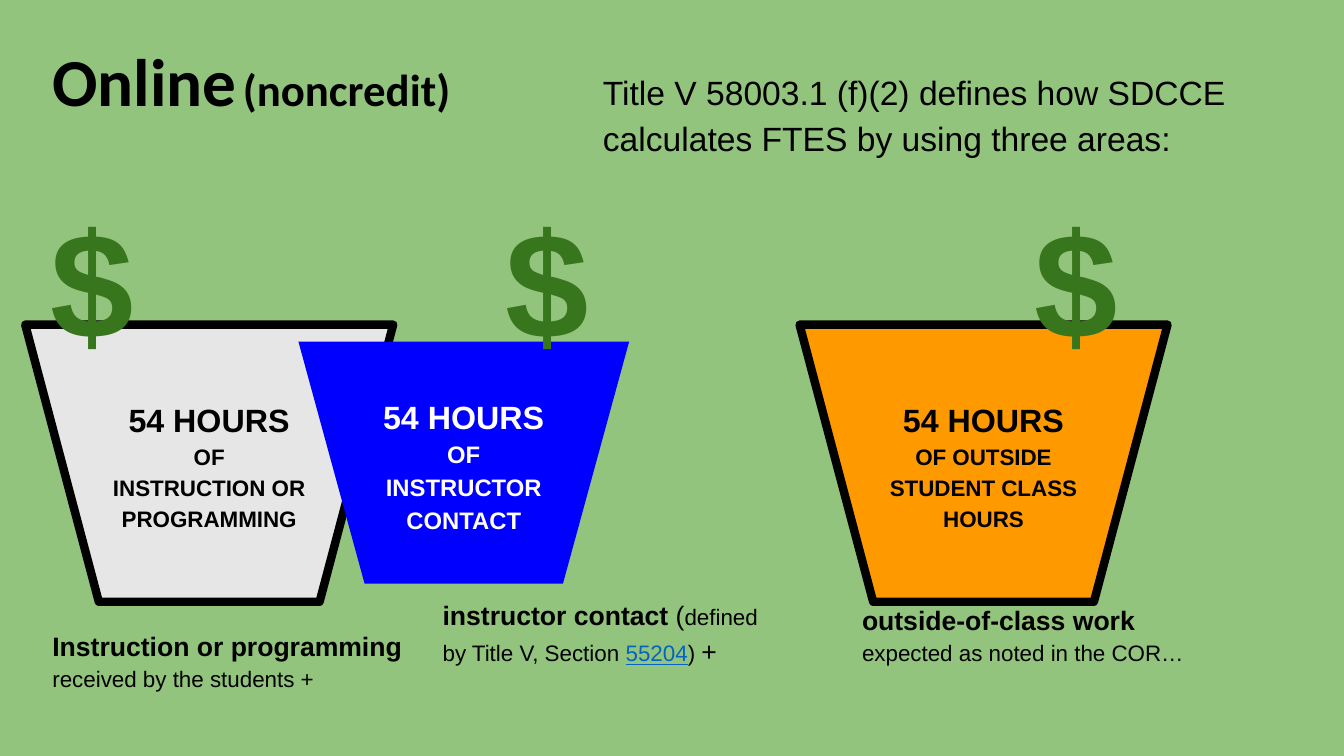
from lxml import etree
from pptx import Presentation
from pptx.dml.color import RGBColor
from pptx.enum.shapes import MSO_SHAPE as Shape
from pptx.enum.text import MSO_ANCHOR as Anchor, PP_ALIGN as Align
from pptx.oxml.ns import qn
from pptx.util import Inches, Pt

BLACK = RGBColor(0x00, 0x00, 0x00)
WHITE = RGBColor(0xFF, 0xFF, 0xFF)
SAGE = RGBColor(0x93, 0xC4, 0x7D)
GRAY = RGBColor(0xE7, 0xE6, 0xE6)
BLUE = RGBColor(0x00, 0x00, 0xFF)
ORANGE = RGBColor(0xFF, 0x99, 0x00)
GREEN = RGBColor(0x38, 0x76, 0x1D)
LINK_BLUE = RGBColor(0x05, 0x63, 0xC1)

# A span is (text, size, bold, colour); a paragraph is a list of spans.
TITLE = [[("Online", 48, True, BLACK), (" ", 19, True, BLACK),
          ("(noncredit)", 32, True, BLACK)]]
INTRO = [[("Title V 58003.1 (f)(2) defines how SDCCE calculates FTES "
           "by using three areas:", 24, False, BLACK)]]
DOLLAR = [[("$", 107, True, GREEN)]]

# (left, top, width, height), fill, outlined, paragraphs
BUCKETS = [
    ((0.25, 3.22, 3.65, 2.75), GRAY, True,
     [[("54 HOURS", 23, True, BLACK)],
      [("OF", 16, True, BLACK)],
      [("INSTRUCTION OR PROGRAMMING", 16, True, BLACK)]]),
    ((2.96, 3.39, 3.28, 2.4), BLUE, False,
     [[("54 HOURS", 23, True, WHITE),
       (" OF INSTRUCTOR CONTACT", 17, True, WHITE)]]),
    ((7.93, 3.22, 3.65, 2.75), ORANGE, True,
     [[("54 HOURS", 23, True, BLACK),
       (" OF OUTSIDE STUDENT CLASS HOURS", 16, True, BLACK)]]),
]
DOLLAR_LEFTS = [0, 4.51, 9.76]
CAPTIONS = [
    ((0.39, 6.07, 4.37, 1.37),
     [[("Instruction or programming ", 19, True, BLACK),
       ("received by the students +", 16, False, BLACK)]]),
    ((4.26, 5.76, 3.65, 1.51),
     [[("instructor contact", 19, True, BLACK), (" (", 19, False, BLACK),
       ("defined by Title V, Section ", 16, False, BLACK),
       ("55204", 16, False, LINK_BLUE),
       (") ", 16, False, BLACK), ("+", 19, False, BLACK)]]),
    ((8.42, 5.81, 3.77, 1.9),
     [[("outside-of-class work ", 19, True, BLACK),
       ("expected as noted in the COR…", 16, False, BLACK)]]),
]


def write(shape, paragraphs, align=Align.LEFT, anchor=Anchor.TOP,
          spacing=1.15, font="Arial"):
    frame = shape.text_frame
    frame.word_wrap = True
    frame.vertical_anchor = anchor
    frame.margin_left = frame.margin_right = Inches(0.13)
    frame.margin_top = frame.margin_bottom = Inches(0.13)
    for index, spans in enumerate(paragraphs):
        para = frame.add_paragraph() if index else frame.paragraphs[0]
        para.alignment = align
        para.line_spacing = spacing
        for text, size, bold, color in spans:
            span = para.add_run()
            span.text = text
            span.font.name = font
            span.font.size = Pt(size)
            span.font.bold = bold
            span.font.color.rgb = color
            span.font.underline = color == LINK_BLUE


def add_text(page, place, paragraphs, **style):
    write(page.shapes.add_textbox(*map(Inches, place)), paragraphs, **style)


def add_bucket(page, place, fill, outlined, paragraphs):
    bucket = page.shapes.add_shape(Shape.FLOWCHART_MANUAL_OPERATION,
                                   *map(Inches, place))
    bucket.shadow.inherit = False
    bucket.fill.solid()
    bucket.fill.fore_color.rgb = fill
    if outlined:
        bucket.line.color.rgb = BLACK
        bucket.line.width = Pt(6)
        etree.SubElement(bucket.line._get_or_add_ln(), qn("a:round"))
    else:
        bucket.line.fill.background()
    write(bucket, paragraphs, Align.CENTER, Anchor.MIDDLE)


def main():
    deck = Presentation()
    deck.slide_width, deck.slide_height = Inches(13.33), Inches(7.5)
    page = deck.slides.add_slide(deck.slide_layouts[6])
    page.background.fill.solid()
    page.background.fill.fore_color.rgb = SAGE

    add_text(page, (0.39, 0.52, 6.22, 0.8), TITLE, anchor=Anchor.BOTTOM,
             spacing=1.0, font="Calibri")
    for bucket in BUCKETS:
        add_bucket(page, *bucket)
    for left in DOLLAR_LEFTS:
        add_text(page, (left, 1.74, 1.83, 1.45), DOLLAR,
                 align=Align.CENTER, spacing=1.0)
    for place, paragraphs in CAPTIONS:
        add_text(page, place, paragraphs)
    add_text(page, (5.85, 0.52, 6.94, 2.07), INTRO)
    deck.save("out.pptx")


if __name__ == "__main__":
    main()
